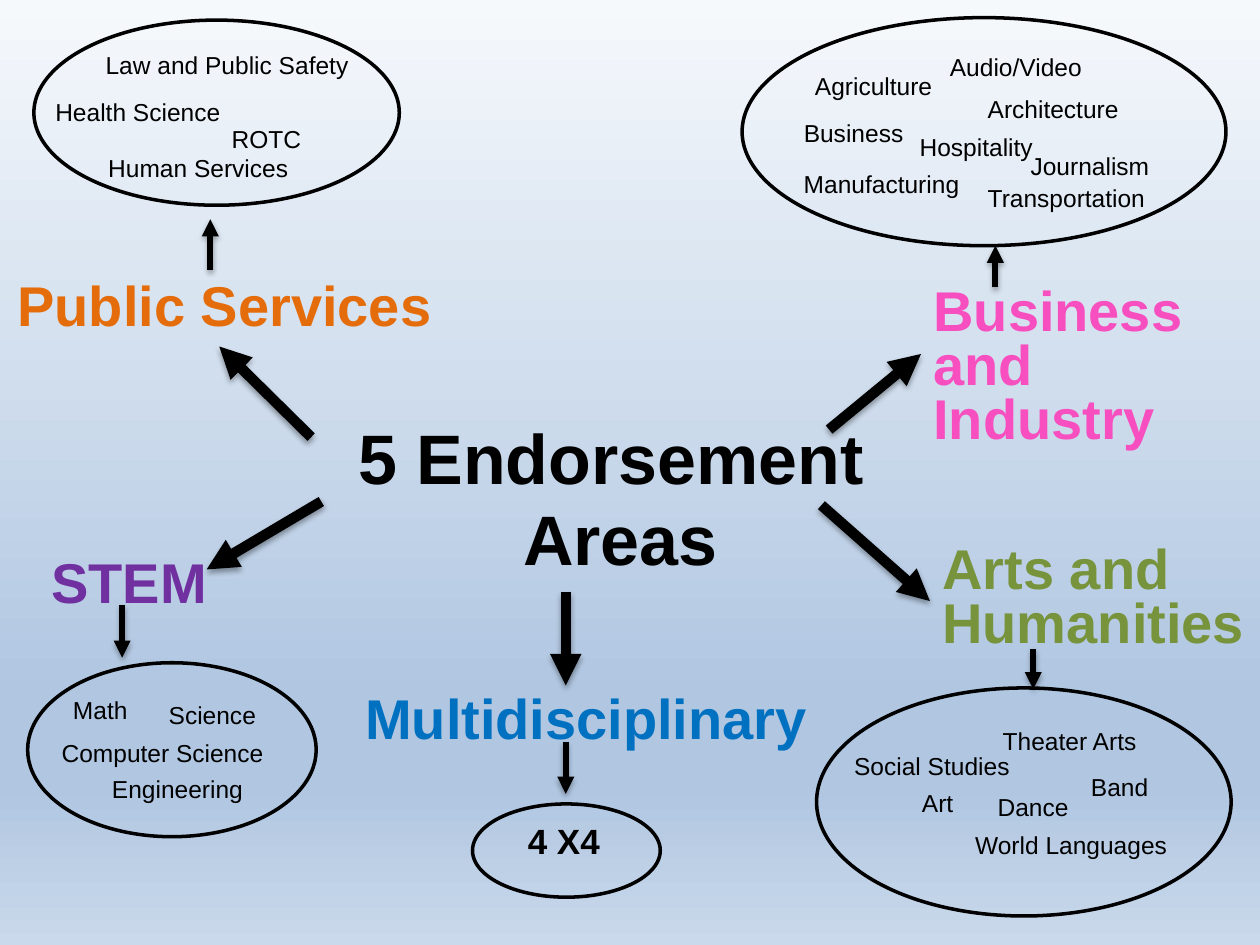
from copy import deepcopy
from dataclasses import dataclass

from pptx import Presentation
from pptx import util as u
from pptx.dml.color import RGBColor
from pptx.enum import shapes, text
from pptx.oxml import parse_xml
from pptx.oxml.ns import nsdecls, qn


@dataclass(frozen=True)
class Theme:
    """Colours, type sizes and line widths of the slide."""
    font: str = "Arial"
    ink: str = "000000"
    public: str = "E46C0A"
    business: str = "F74FBF"
    arts: str = "77933C"
    multi: str = "0070C0"
    stem: str = "7030A0"
    sky: tuple = ((0, "F6F9FC"), (0.74, "B0C6E1"), (0.83, "B0C6E1"), (1, "CAD9EB"))
    title: int = 40
    heading: int = 32
    highlight: int = 20
    term: int = 14
    oval_line: float = 2
    spoke: float = 6
    stem_arrow: float = 3.25


THEME = Theme()


@dataclass(frozen=True)
class Area:
    """One endorsement area; term places are measured from the oval's corner."""
    name: str
    color: str
    heading: tuple
    oval: tuple
    spoke: tuple
    pointer: tuple
    terms: tuple
    term_size: int = THEME.term
    term_bold: bool = False
    joins_heading: bool = False


AREAS = (
    Area("Business and Industry", THEME.business, (526.3, 161.3, 193.7, 100.1),
         (424.1, 10.1, 276.5, 130.3), (473.8, 245.5, 526.3, 202.3), (568.8, 164.2, 140.4),
         (("Agriculture", 34.5, 30.2, 82.8), ("Audio/Video", 111.6, 19.4, 92.9),
          ("Architecture", 133.2, 43.2, 92.9), ("Business", 28.1, 56.9, 92.9),
          ("Hospitality", 94.3, 64.8, 92.9), ("Journalism", 157.7, 75.6, 92.9),
          ("Manufacturing", 28.1, 86.4, 110.9), ("Transportation", 133.2, 94.3, 109.4))),
    Area("Arts and Humanities", THEME.arts, (531.4, 308.9, 188.6, 69.1),
         (466.6, 393.1, 236.9, 130.3), (469.4, 288.7, 531.4, 343.4), (590.4, 370.8, 393.8),
         (("Art", 53.2, 56.9, 55.4), ("Band", 149.7, 47.5, 92.9),
          ("Dance", 96.4, 59.1, 92.9), ("Theater Arts", 99.3, 21.6, 92.9),
          ("Social Studies", 14.4, 36, 119.5), ("World Languages", 83.5, 80.7, 133.2)),
         joins_heading=True),
    Area("Multidisciplinary", THEME.multi, (201.6, 394.6, 275, 38.2),
         (270, 459.4, 107.3, 53.3), (323.3, 338.4, 323.3, 391.7), (323.3, 424.1, 453.6),
         (("4 X4", 24.5, 10, 64.1),), term_size=THEME.highlight, term_bold=True),
    Area("STEM", THEME.stem, (22.3, 316.8, 112.3, 38.2),
         (15.8, 378.7, 164.9, 99.4), (183.6, 286.6, 118.1, 325.4), (69.8, 345.6, 375.8),
         (("Math", 18.8, 18, 58.3), ("Science", 73.5, 20.9, 73.4),
          ("Computer Science", 12.3, 42.5, 144.7), ("Engineering", 41.1, 63.4, 144.7))),
    Area("Public Services", THEME.public, (2.9, 158.4, 267.8, 38.2),
         (19.4, 11.5, 208.8, 105.8), (177.8, 249.8, 125.3, 198), (120.2, 154.1, 125.3),
         (("Human Services", 35.3, 75.6, 131), ("Health Science", 5.1, 43.9, 131),
          ("Law and Public Safety", 33.9, 16.6, 170.6), ("ROTC", 105.9, 59.1, 131))),
)


def points(values):
    """Turn numbers into point lengths."""
    return [u.Pt(value) for value in values]


def add_text(parent, box, *lines, size, color=THEME.ink, bold=False, align=None):
    """Add a text box with one paragraph for each line."""
    label = parent.add_textbox(*points(box))
    frame = label.text_frame
    frame.word_wrap = True
    frame.auto_size = text.MSO_AUTO_SIZE.SHAPE_TO_FIT_TEXT
    for index, line in enumerate(lines):
        paragraph = frame.add_paragraph() if index else frame.paragraphs[0]
        paragraph.alignment = align
        paragraph.line_spacing = 0.8
        spacing = parse_xml(f'<a:spcBef {nsdecls("a")}><a:spcPct val="20000"/></a:spcBef>')
        paragraph.line_spacing and paragraph._p.pPr.append(spacing)
        run = paragraph.add_run()
        run.text = line
        run.font.name = THEME.font
        run.font.size = u.Pt(size)
        run.font.bold = bold
        run.font.color.rgb = RGBColor.from_string(color)
    return label


def add_arrow(parent, ends, width):
    """Add a straight arrow with a soft shadow."""
    arrow = parent.add_connector(shapes.MSO_CONNECTOR.STRAIGHT, *points(ends))
    arrow.line.width = u.Pt(width)
    arrow.line.color.rgb = RGBColor.from_string(THEME.ink)
    arrow.line._get_or_add_ln().append(parse_xml(f'<a:tailEnd {nsdecls("a")} type="triangle"/>'))
    arrow._element.spPr.append(parse_xml(
        f'<a:effectLst {nsdecls("a")}>'
        '<a:outerShdw blurRad="40000" dist="23000" dir="5400000" rotWithShape="0">'
        f'<a:srgbClr val="{THEME.ink}"><a:alpha val="35000"/></a:srgbClr>'
        '</a:outerShdw></a:effectLst>'))
    return arrow


def paint_background(slide):
    """Fill the slide with the vertical sky gradient."""
    fill = slide.background.fill
    fill.gradient()
    fill.gradient_angle = 270
    stops = slide.element.find(".//" + qn("a:gsLst"))
    for _ in range(len(THEME.sky) - len(stops)):
        stops.append(deepcopy(stops[0]))
    for stop, (position, color) in zip(fill.gradient_stops, THEME.sky):
        stop.position = position
        stop.color.rgb = RGBColor.from_string(color)


def add_title(slide, box):
    """Place the central title in its box."""
    add_text(slide.shapes, box, "5 Endorsement ", "Areas", size=THEME.title,
             bold=True, align=text.PP_ALIGN.CENTER)


def add_cluster(slide, box, area):
    """Place an area's terms and the oval around them."""
    left, top, _, _ = box
    cluster = slide.shapes.add_group_shape().shapes
    for term, across, down, width in area.terms:
        add_text(cluster, (left + across, top + down, width, 1.5 * area.term_size),
                 term, size=area.term_size, bold=area.term_bold)
    oval = cluster.add_shape(shapes.MSO_SHAPE.OVAL, *points(box))
    oval.shadow.inherit = False
    oval.fill.background()
    oval.line.color.rgb = RGBColor.from_string(THEME.ink)
    oval.line.width = u.Pt(THEME.oval_line)


def add_area(slide, area):
    """Place an area's heading, arrows and cluster."""
    heading = add_text(slide.shapes, area.heading, area.name, size=THEME.heading,
                       color=area.color, bold=True)
    spoke = add_arrow(slide.shapes, area.spoke, THEME.spoke)
    if area.joins_heading:
        spoke.end_connect(heading, 1)
    add_cluster(slide, area.oval, area)
    across, start, end = area.pointer
    add_arrow(slide.shapes, (across, start, across, end), THEME.stem_arrow)


def main():
    """Build the slide and save it."""
    deck = Presentation()
    deck.slide_width, deck.slide_height = points((720, 540))
    slide = deck.slides.add_slide(deck.slide_layouts[6])
    paint_background(slide)
    add_title(slide, (177.8, 242.6, 353.5, 94.3))
    for area in AREAS:
        add_area(slide, area)
    deck.save("out.pptx")


if __name__ == "__main__":
    main()
